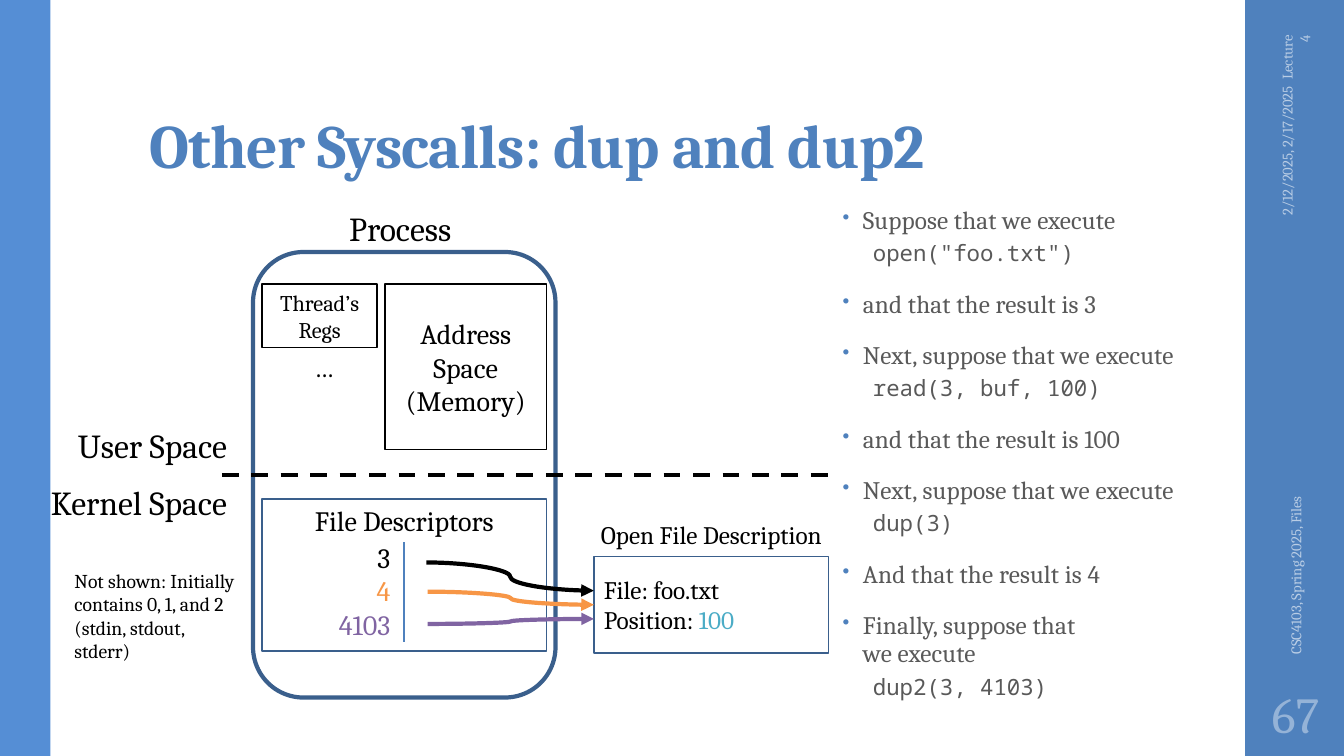
from lxml import etree
from pptx import Presentation
from pptx.dml.color import RGBColor
from pptx.enum import dml, shapes, text
from pptx.oxml import ns
from pptx.util import Inches, Pt

COLORS = {
    "black": "000000", "white": "FFFFFF", "blue": "4F81BD", "stripe": "558ED5",
    "outline": "3A5F8C", "body": "595959", "footer": "B9CDE5", "number": "95B3D7",
    "orange": "F79646", "purple": "8064A2", "teal": "4BACC6",
}
SERIF, MONO = "Cambria", "Noto Sans Mono"
LEFT, CENTER, RIGHT = text.PP_ALIGN.LEFT, text.PP_ALIGN.CENTER, text.PP_ALIGN.RIGHT
TOP, MIDDLE, BOTTOM = text.MSO_ANCHOR.TOP, text.MSO_ANCHOR.MIDDLE, text.MSO_ANCHOR.BOTTOM
STEPS = [
    ("Suppose that we execute", 'open("foo.txt")'),
    ("and that the result is 3", None),
    ("Next, suppose that we execute", "read(3, buf, 100)"),
    ("and that the result is 100", None),
    ("Next, suppose that we execute", "dup(3)"),
    ("And that the result is 4", None),
    ("Finally, suppose that\vwe execute", "dup2(3, 4103)"),
]


def rgb(name):
    return RGBColor.from_string(COLORS[name])


def add_xml(parent, tag, **attrs):
    return etree.SubElement(parent, ns.qn(tag), attrs)


def style(p, size, color="black", align=LEFT, font=SERIF, bold=False):
    p.alignment = align
    p.font.name, p.font.size, p.font.bold = font, Pt(size), bold
    p.font.color.rgb = rgb(color)


def set_spacing(p, hundredths):
    p._p.get_or_add_pPr().get_or_add_defRPr().set("spc", str(hundredths))


def write(tf, lines, size, colors=("black",), align=LEFT, anchor=TOP):
    tf.vertical_anchor = anchor
    tf.text = "\n".join(lines)
    for i, p in enumerate(tf.paragraphs):
        style(p, size, colors[i % len(colors)], align)


def add_text(s, box, lines, size, colors=("black",), align=LEFT, anchor=TOP,
             wrap=True, grow=False):
    sp = s.shapes.add_textbox(*map(Inches, box))
    tf = sp.text_frame
    tf.word_wrap = wrap
    if grow:
        tf.auto_size = text.MSO_AUTO_SIZE.SHAPE_TO_FIT_TEXT
    write(tf, lines, size, colors, align, anchor)
    return sp


def add_label(s, box, lines, size, align=CENTER, colors=("black",)):
    return add_text(s, box, lines, size, colors, align, wrap=False, grow=True)


def add_box(s, box, fill=None, line=None, width=1.1,
            kind=shapes.MSO_SHAPE.RECTANGLE):
    sp = s.shapes.add_shape(kind, *map(Inches, box))
    sp.shadow.inherit = False
    if fill:
        sp.fill.solid()
        sp.fill.fore_color.rgb = rgb(fill)
    else:
        sp.fill.background()
    if line:
        sp.line.color.rgb = rgb(line)
        sp.line.width = Pt(width)
    else:
        sp.line.fill.background()
    return sp


def add_line(s, start, end, color, width, kind=shapes.MSO_CONNECTOR.STRAIGHT):
    c = s.shapes.add_connector(kind, *map(Inches, start + end))
    c.line.color.rgb = rgb(color)
    c.line.width = Pt(width)
    add_xml(c._element.spPr, "a:effectLst")
    return c


def add_arrow(s, start, end, color):
    c = add_line(s, start, end, color, 3, shapes.MSO_CONNECTOR.CURVE)
    add_xml(c.line._get_or_add_ln(), "a:tailEnd", type="triangle")
    return c


def add_bullet(p):
    pPr = p._p.get_or_add_pPr()
    pPr.set("marL", str(Inches(0.2)))
    pPr.set("indent", str(Inches(-0.2)))
    bullet_color = etree.Element(ns.qn("a:buClr"))
    add_xml(bullet_color, "a:srgbClr", val=COLORS["blue"])
    bullet_size = etree.Element(ns.qn("a:buSzPct"), val="80000")
    bullet_char = etree.Element(ns.qn("a:buChar"), char="•")
    for el in (bullet_color, bullet_size, bullet_char):
        pPr.get_or_add_defRPr().addprevious(el)


def add_steps(s):
    sp = s.shapes.add_textbox(Inches(8.26), Inches(2), Inches(4.3), Inches(5.1))
    tf = sp.text_frame
    tf.word_wrap = True
    for i, (step, code) in enumerate(STEPS):
        p = tf.add_paragraph() if i else tf.paragraphs[0]
        p.text = step
        style(p, 18, "body")
        set_spacing(p, 10)
        p.line_spacing, p.space_before, p.space_after = 0.95, Pt(14), Pt(2)
        add_bullet(p)
        if code:
            p = tf.add_paragraph()
            p.text, p.level = code, 1
            style(p, 16, "body", font=MONO)
            p.line_spacing, p.space_before, p.space_after = 0.9, Pt(3), Pt(3)
            pPr = p._p.get_or_add_pPr()
            pPr.set("marL", str(Inches(0.3)))
            pPr.set("indent", "0")


def add_frame(s):
    add_box(s, (12.35, 0, 1, 7.5), "blue")
    add_box(s, (0, 0, 0.5, 7.5), "stripe")
    title = add_text(s, (1.38, 0.32, 10.6, 1.53), ["Other Syscalls: dup and dup2"],
                     44, ("blue",), anchor=BOTTOM)
    title.text_frame.margin_top = Inches(0.03)
    p = title.text_frame.paragraphs[0]
    p.font.bold, p.line_spacing = True, 0.9
    set_spacing(p, -50)
    date = add_text(s, (11.81, 1.09, 2.08, 0.4), ["2/12/2025, 2/17/2025  Lecture 4"],
                    10.5, ("footer",), RIGHT, MIDDLE)
    course = add_text(s, (10.89, 4.43, 3.92, 0.4), ["CSC4103, Spring 2025, Files"],
                      10.5, ("footer",), anchor=MIDDLE)
    date.rotation = course.rotation = 270
    number = add_text(s, (12.35, 6.75, 1, 0.65), ["67"], 36, ("number",), CENTER, MIDDLE)
    number.text_frame.margin_left = number.text_frame.margin_right = Inches(0.05)


def add_process(s):
    add_box(s, (2.51, 2.5, 3, 4.42), line="outline", width=3,
            kind=shapes.MSO_SHAPE.ROUNDED_RECTANGLE)
    divider = add_line(s, (2.2, 4.71), (8.22, 4.71), "black", 3)
    divider.line.dash_style = dml.MSO_LINE.DASH
    add_label(s, (0.64, 4.17, 1.71, 0.5), ["User Space"], 24, RIGHT)
    add_label(s, (0.39, 4.73, 1.96, 0.5), ["Kernel Space"], 24, RIGHT)
    add_label(s, (3.35, 2.01, 1.24, 0.5), ["Process"], 24)
    memory = add_box(s, (3.82, 2.82, 1.6, 1.64), "white", "black")
    write(memory.text_frame, ["Address Space (Memory)"], 20, align=CENTER, anchor=MIDDLE)
    regs = add_box(s, (2.6, 2.82, 1.14, 0.63), "white", "black")
    write(regs.text_frame, ["Thread’s Regs"], 16, align=CENTER, anchor=MIDDLE)
    add_label(s, (3.02, 3.45, 0.38, 0.4), ["…"], 18, LEFT)


def add_files(s):
    table = add_box(s, (2.6, 4.95, 2.82, 1.51), "white", "outline")
    write(table.text_frame, ["File Descriptors"], 20, align=CENTER)
    add_line(s, (4.01, 5.38), (4.01, 6.37), "blue", 1.5)
    add_label(s, (3.14, 5.31, 0.83, 1.11), ["3", "4", "4103"], 20, RIGHT,
              ("black", "orange", "purple"))
    add_label(s, (5.85, 5.1, 2.41, 0.4), ["Open File Description"], 18)
    entry = add_box(s, (5.89, 5.52, 2.33, 0.96), "white", "outline")
    write(entry.text_frame, ["File: foo.txt", "Position: "], 18, anchor=MIDDLE)
    r = entry.text_frame.paragraphs[1].add_run()
    r.text = "100"
    r.font.color.rgb = rgb("teal")
    add_arrow(s, (4.23, 5.58), (5.89, 5.86), "black")
    add_arrow(s, (4.24, 5.87), (5.89, 6), "orange").end_connect(entry, 1)
    add_arrow(s, (4.24, 6.19), (5.89, 6.14), "purple")
    add_text(s, (0.64, 5.59, 1.84, 1.04),
             ["Not shown: Initially contains 0, 1, and 2 (stdin, stdout, stderr)"],
             14, grow=True)


def main():
    prs = Presentation()
    prs.slide_width, prs.slide_height = Inches(13.33), Inches(7.5)
    s = prs.slides.add_slide(prs.slide_layouts[6])
    add_frame(s)
    add_steps(s)
    add_process(s)
    add_files(s)
    prs.save("out.pptx")


if __name__ == "__main__":
    main()
